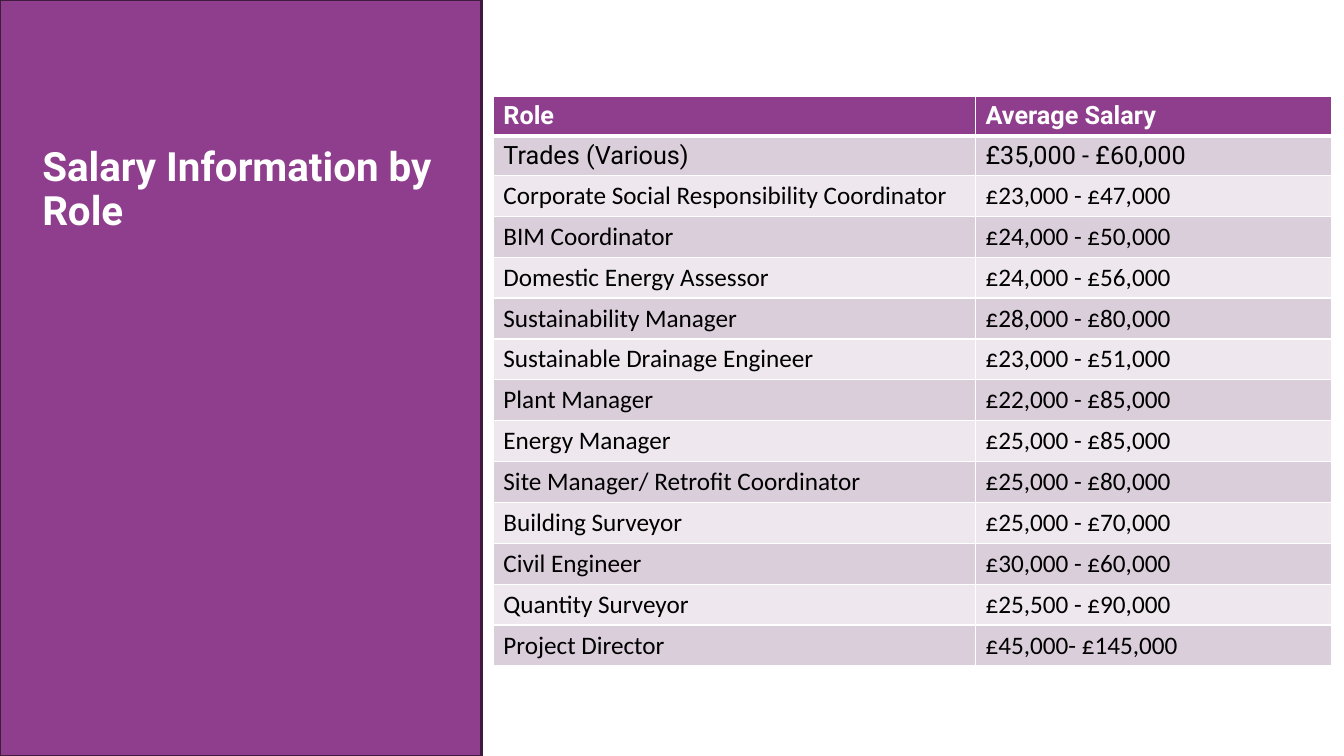
from dataclasses import dataclass

from lxml.etree import SubElement
from pptx import Presentation
from pptx.dml.color import RGBColor
from pptx.enum.shapes import MSO_SHAPE
from pptx.enum.text import MSO_ANCHOR, MSO_AUTO_SIZE, PP_ALIGN
from pptx.oxml.ns import qn
from pptx.util import Pt


@dataclass(frozen=True)
class Theme:
    purple: str = "8F3E8D"
    outline: str = "3F1B3E"
    white: str = "FFFFFF"
    black: str = "000000"
    bands: tuple = ("DBCEDB", "EEE8EE")
    heading_font: str = "Roboto"
    body_font: str = "Calibri"
    title_size: float = 28.8
    table_size: float = 18


@dataclass(frozen=True)
class Box:
    left: float
    top: float
    width: float
    height: float

    def emu(self):
        return [Pt(n) for n in (self.left, self.top, self.width, self.height)]


THEME = Theme()
PAGE = Box(0, 0, 960, 540)
PANEL = Box(0, 0, 344, 540)
TABLE = Box(352.4, 68.6, 599, 364)
ROLE_SHARE = 0.575

SALARIES = [
    ("Role", "Average Salary"),
    ("Trades (Various)", "£35,000 - £60,000"),
    ("Corporate Social Responsibility Coordinator", "£23,000 - £47,000"),
    ("BIM Coordinator", "£24,000 - £50,000"),
    ("Domestic Energy Assessor", "£24,000 - £56,000"),
    ("Sustainability Manager", "£28,000 - £80,000"),
    ("Sustainable Drainage Engineer", "£23,000 - £51,000"),
    ("Plant Manager", "£22,000 - £85,000"),
    ("Energy Manager", "£25,000 - £85,000"),
    ("Site Manager/ Retrofit Coordinator", "£25,000 - £80,000"),
    ("Building Surveyor", "£25,000 - £70,000"),
    ("Civil Engineer", "£30,000 - £60,000"),
    ("Quantity Surveyor", "£25,500 - £90,000"),
    ("Project Director", "£45,000- £145,000"),
]


def rgb(value):
    return RGBColor.from_string(value)


def style_font(para, name, size, color, bold=False):
    font = para.font
    font.name, font.size, font.bold = name, Pt(size), bold
    font.color.rgb = rgb(color)


def add_title_panel(page, box, text):
    panel = page.shapes.add_shape(MSO_SHAPE.RECTANGLE, *box.emu())
    panel.shadow.inherit = False
    panel.fill.solid()
    panel.fill.fore_color.rgb = rgb(THEME.purple)
    panel.line.color.rgb = rgb(THEME.outline)
    panel.line.width = Pt(1.5)

    title = page.shapes.title
    panel.element.addnext(title.element)
    title_box = Box(box.left + 23, box.top + 110, box.width - 48, 52)
    title.left, title.top, title.width, title.height = title_box.emu()
    frame = title.text_frame
    frame.text = text
    frame.word_wrap = True
    frame.auto_size = MSO_AUTO_SIZE.NONE
    frame.vertical_anchor = MSO_ANCHOR.MIDDLE
    para = frame.paragraphs[0]
    para.alignment = PP_ALIGN.LEFT
    para.line_spacing = 0.9
    style_font(para, THEME.heading_font, THEME.title_size, THEME.white, bold=True)


def set_borders(cell, widths):
    """Draw white borders; widths maps the sides L, R, T, B to points."""
    properties = cell._tc.get_or_add_tcPr()
    for position, (side, width) in enumerate(widths.items()):
        line = properties.makeelement(qn(f"a:ln{side}"), {"w": str(Pt(width))})
        fill = SubElement(line, qn("a:solidFill"))
        SubElement(fill, qn("a:srgbClr"), val=THEME.white)
        properties.insert(position, line)


def style_cell(cell, row):
    is_header = row == 0
    cell.fill.solid()
    cell.fill.fore_color.rgb = rgb(THEME.purple if is_header else THEME.bands[(row - 1) % 2])
    style_font(
        cell.text_frame.paragraphs[0],
        THEME.heading_font if row < 2 else THEME.body_font,
        THEME.table_size,
        THEME.white if is_header else THEME.black,
        bold=is_header,
    )
    set_borders(cell, {"L": 1, "R": 1, "T": 3 if row == 1 else 1, "B": 3 if is_header else 1})


def add_salary_table(page, box, rows):
    table = page.shapes.add_table(len(rows), len(rows[0]), *box.emu()).table
    for column, share in zip(table.columns, (ROLE_SHARE, 1 - ROLE_SHARE)):
        column.width = Pt(box.width * share)
    for row, values in enumerate(rows):
        for column, value in enumerate(values):
            cell = table.cell(row, column)
            cell.text = value
            style_cell(cell, row)


def main():
    deck = Presentation()
    deck.slide_width, deck.slide_height = Pt(PAGE.width), Pt(PAGE.height)
    page = deck.slides.add_slide(deck.slide_layouts.get_by_name("Title Only"))
    add_title_panel(page, PANEL, "Salary Information by Role")
    add_salary_table(page, TABLE, SALARIES)
    deck.save("out.pptx")


if __name__ == "__main__":
    main()
